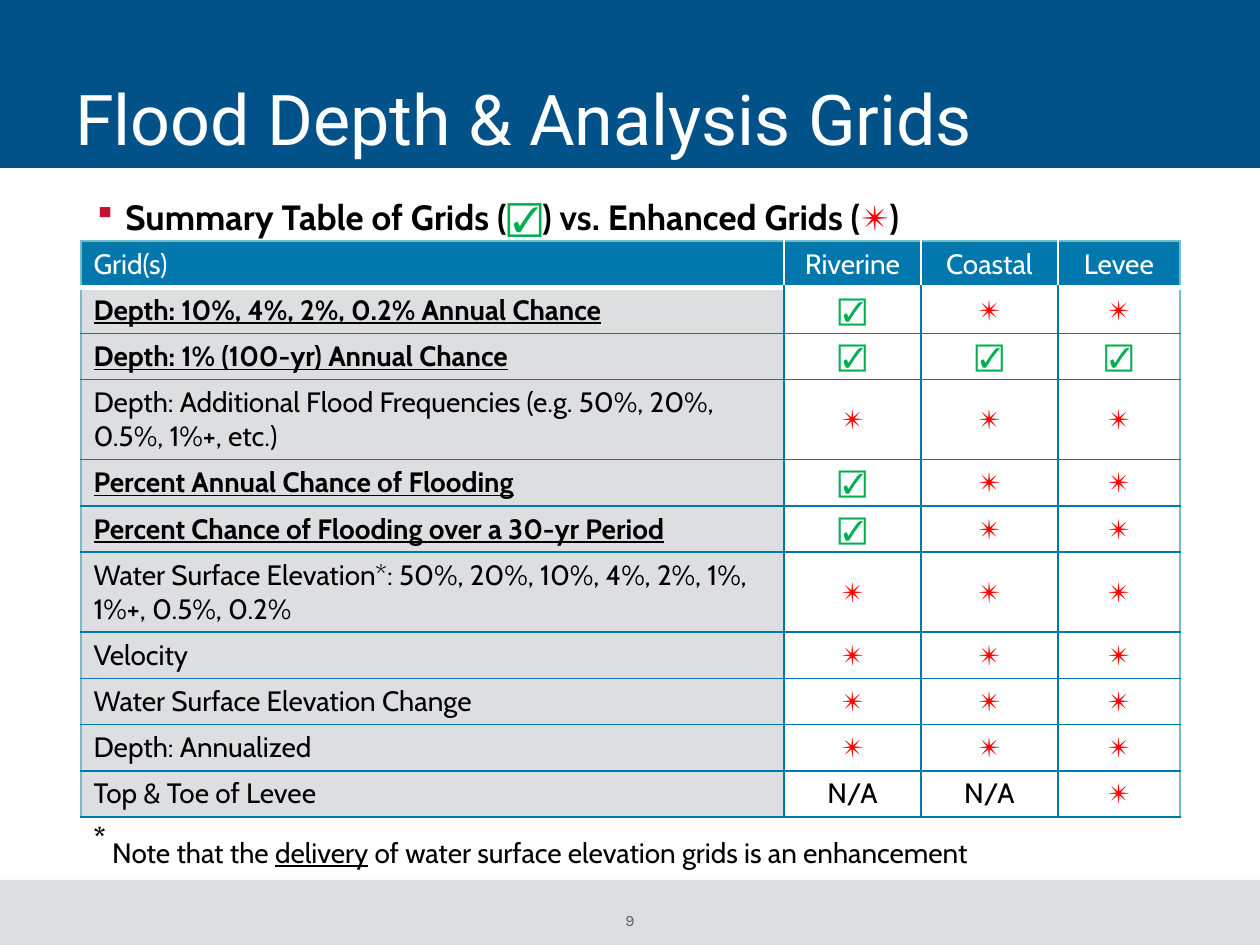
from lxml import etree
from pptx import Presentation
from pptx import util as u
from pptx.dml import color
from pptx.enum import shapes, text
from pptx.oxml import ns

HUES = {
    "navy": "005288", "blue": "0078AE", "teal": "72BFC5", "grey": "DDDEDF",
    "slate": "5B5C5E", "white": "FFFFFF", "black": "000000",
    "green": "00B050", "red": "FF0000", "wine": "C41230",
}
YES, STAR = "☑", "✴"
MARKS = {YES: "green", STAR: "red"}
HEADS = ["Grid(s)", "Riverine", "Coastal", "Levee"]
GRIDS = [
    ("Depth: 10%, 4%, 2%, 0.2% Annual Chance", True, [YES, STAR, STAR]),
    ("Depth: 1% (100-yr) Annual Chance", True, [YES, YES, YES]),
    ("Depth: Additional Flood Frequencies (e.g. 50%, 20%, 0.5%, 1%+, etc.)",
     False, [STAR] * 3),
    ("Percent Annual Chance of Flooding", True, [YES, STAR, STAR]),
    ("Percent Chance of Flooding over a 30-yr Period", True, [YES, STAR, STAR]),
    ("Water Surface Elevation*: 50%, 20%, 10%, 4%, 2%, 1%, 1%+, 0.5%, 0.2%",
     False, [STAR] * 3),
    ("Velocity", False, [STAR] * 3),
    ("Water Surface Elevation Change", False, [STAR] * 3),
    ("Depth: Annualized", False, [STAR] * 3),
    ("Top & Toe of Levee", False, ["N/A", "N/A", STAR]),
]


def px(n):
    return u.Emu(round(n * 914400 / 126))


def rgb(hue):
    return color.RGBColor.from_string(HUES[hue])


def style(run, size, hue, face="Cabin", bold=False, under=False):
    font = run.font
    font.size, font.name = u.Pt(size), face
    font.bold, font.underline = bold, under
    font.color.rgb = rgb(hue)


def band(slide, box, hue):
    shape = slide.shapes.add_shape(shapes.MSO_SHAPE.RECTANGLE, *map(px, box))
    shape.shadow.inherit = False
    shape.fill.solid()
    shape.fill.fore_color.rgb = rgb(hue)
    shape.line.fill.background()


def label(slide, box):
    frame = slide.shapes.add_textbox(*map(px, box)).text_frame
    frame.word_wrap = True
    return frame


def header(slide, box):
    left, top, wide, high = box
    band(slide, box, "navy")
    frame = label(slide, (left + 63, top + 6, wide - 126, high - 9))
    frame.vertical_anchor = text.MSO_ANCHOR.BOTTOM
    frame.text = "Flood Depth & Analysis Grids"
    para = frame.paragraphs[0]
    para.line_spacing = 0.8
    style(para.runs[0], 40, "white", "Roboto")


def footer(slide, box):
    left, top, wide, high = box
    band(slide, box, "grey")
    frame = label(slide, (left + 525, top + 31, wide - 1050, 19))
    frame.margin_left = frame.margin_right = 0
    frame.margin_top = frame.margin_bottom = 0
    frame.text = "9"
    para = frame.paragraphs[0]
    para.alignment = text.PP_ALIGN.CENTER
    style(para.runs[0], 9, "slate", "Karla")


def bullet(para):
    props = para._p.get_or_add_pPr()
    props.set("marL", str(px(32)))
    props.set("indent", str(-px(32)))
    tint = etree.SubElement(props, ns.qn("a:buClr"))
    etree.SubElement(tint, ns.qn("a:srgbClr"), val=HUES["wine"])
    etree.SubElement(props, ns.qn("a:buSzPct"), val="90000")
    etree.SubElement(props, ns.qn("a:buChar"), char="▪")


def legend(slide, box):
    para = label(slide, box).paragraphs[0]
    bullet(para)
    for part in ["Summary Table of Grids (", YES, ") vs. Enhanced Grids (", STAR, ")"]:
        run = para.add_run()
        run.text = part
        style(run, 20, MARKS.get(part, "black"), bold=part not in MARKS)


def note(slide, box):
    para = label(slide, box).paragraphs[0]
    parts = ["*", " Note that the ", "delivery",
             " of water surface elevation grids is an enhancement"]
    for part in parts:
        run = para.add_run()
        run.text = part
        style(run, 28 if part == "*" else 16, "black",
              bold=part == "*", under=part == "delivery")
    para.runs[0].font._element.set("baseline", "30000")


def border(cell, row, col):
    inner = "blue" if row else "white"
    sides = [
        ("L", inner if col else "teal", 1),
        ("R", inner if col < len(HEADS) - 1 else "teal", 1),
        ("T", "teal" if row == 0 else "white" if row == 1 else "blue", 1),
        ("B", inner, 1 if row else 3),
    ]
    props = cell._tc.get_or_add_tcPr()
    for spot, (side, hue, wide) in enumerate(sides):
        line = etree.Element(ns.qn("a:ln" + side), w=str(u.Pt(wide)))
        fill = etree.SubElement(line, ns.qn("a:solidFill"))
        etree.SubElement(fill, ns.qn("a:srgbClr"), val=HUES[hue])
        props.insert(spot, line)


def fill_cell(cell, row, col, word, strong):
    cell.fill.solid()
    shade = "blue" if row == 0 else "white" if col else "grey"
    cell.fill.fore_color.rgb = rgb(shade)
    if row:
        cell.vertical_anchor = text.MSO_ANCHOR.MIDDLE
    cell.text = word
    para = cell.text_frame.paragraphs[0]
    if col:
        para.alignment = text.PP_ALIGN.CENTER
    hue = MARKS.get(word, "black") if row else "white"
    style(para.runs[0], 16, hue, bold=strong, under=strong)
    border(cell, row, col)


def matrix(slide, box):
    rows = [(HEADS, False)] + [([name] + marks, bold) for name, bold, marks in GRIDS]
    table = slide.shapes.add_table(len(rows), len(HEADS), *map(px, box)).table
    table.first_row = table.horz_banding = False
    for col, wide in enumerate([703, 137, 137, 122]):
        table.columns[col].width = px(wide)
    for row, (words, bold) in enumerate(rows):
        table.rows[row].height = px(80 if len(words[0]) > 60 else 46)
        for col, word in enumerate(words):
            fill_cell(table.cell(row, col), row, col, word, bold and col == 0)


def main():
    deck = Presentation()
    deck.slide_width, deck.slide_height = px(1260), px(945)
    slide = deck.slides.add_slide(deck.slide_layouts[6])
    footer(slide, (0, 880, 1260, 65))
    header(slide, (0, 0, 1260, 168))
    legend(slide, (81, 189, 1134, 52))
    matrix(slide, (81, 241, 1099, 576))
    note(slide, (81, 808, 1134, 60))
    deck.save("out.pptx")


if __name__ == "__main__":
    main()
